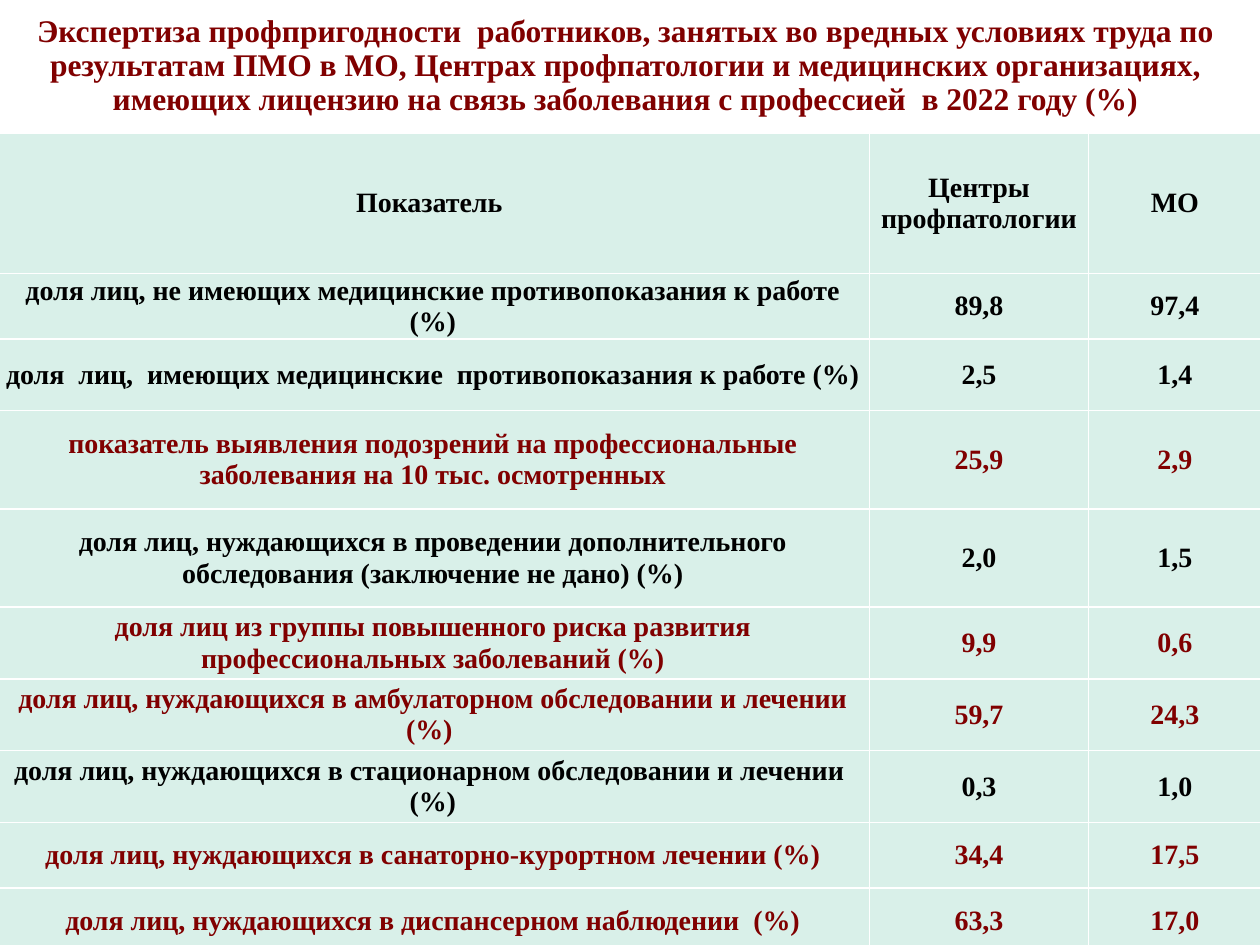
import lxml.etree
import pptx
import pptx.dml.color
import pptx.enum.text
import pptx.oxml.ns
import pptx.util
from pptx.util import Inches

MAROON = pptx.dml.color.RGBColor(0x80, 0x00, 0x00)
BLACK = pptx.dml.color.RGBColor(0x00, 0x00, 0x00)
MINT = pptx.dml.color.RGBColor(0xD9, 0xF0, 0xE9)
WHITE = pptx.dml.color.RGBColor(0xFF, 0xFF, 0xFF)

TITLE = (
    "Экспертиза профпригодности  работников, занятых во вредных условиях труда "
    "по результатам ПМО в МО, Центрах профпатологии и медицинских организациях, "
    "имеющих лицензию на связь заболевания с профессией  в 2022 году (%)"
)
COLUMN_WIDTHS = (6.93, 1.74, 1.37)
# Row height, text colour, indicator, occupational centres, medical organisations
INDICATORS = (
    (1.11, BLACK, "Показатель\u00a0", "Центры профпатологии", "МО"),
    (0.52, BLACK, "доля лиц, не имеющих медицинские противопоказания к работе (%)",
     "89,8", "97,4"),
    (0.57, BLACK, "доля  лиц,  имеющих медицинские  противопоказания к работе (%)",
     "2,5", "1,4"),
    (0.78, MAROON, "показатель выявления подозрений на профессиональные "
     "заболевания на 10 тыс. осмотренных", "25,9", "2,9"),
    (0.78, BLACK, "доля лиц, нуждающихся в проведении дополнительного "
     "обследования (заключение не дано) (%)", "2,0", "1,5"),
    (0.57, MAROON, "доля лиц из группы повышенного риска развития "
     "профессиональных заболеваний (%)", "9,9", "0,6"),
    (0.57, MAROON, "доля лиц, нуждающихся в амбулаторном обследовании и лечении (%) ",
     "59,7", "24,3"),
    (0.57, BLACK, "доля лиц, нуждающихся в стационарном обследовании и лечении  (%)",
     "0,3", "1,0"),
    (0.52, MAROON, "доля лиц, нуждающихся в санаторно-курортном лечении (%)",
     "34,4", "17,5"),
    (0.52, MAROON, "доля лиц, нуждающихся в диспансерном наблюдении  (%)",
     "63,3", "17,0"),
)


def format_paragraph(paragraph, size, color):
    paragraph.alignment = pptx.enum.text.PP_ALIGN.CENTER
    font = paragraph.font
    font.name = "Times New Roman"
    font.size = pptx.util.Pt(size)
    font.bold = True
    font.color.rgb = color


def set_title(slide):
    title = slide.shapes.title
    title.left, title.top = Inches(-0.03), Inches(0.12)
    title.width, title.height = Inches(9.99), Inches(0.99)
    frame = title.text_frame
    frame.text = TITLE
    frame.word_wrap = True
    frame.auto_size = pptx.enum.text.MSO_AUTO_SIZE.NONE
    frame.vertical_anchor = pptx.enum.text.MSO_ANCHOR.TOP
    frame.margin_top = frame.margin_bottom = 0
    paragraph = frame.paragraphs[0]
    paragraph.line_spacing = 0.9
    format_paragraph(paragraph, 18, MAROON)


def add_borders(cell):
    """Draw white one-point lines; call before the fill, which must follow them."""
    properties = cell._tc.get_or_add_tcPr()
    qn = pptx.oxml.ns.qn
    for side in ("a:lnL", "a:lnR", "a:lnT", "a:lnB"):
        line = lxml.etree.SubElement(properties, qn(side), w=str(pptx.util.Pt(1)))
        solid = lxml.etree.SubElement(line, qn("a:solidFill"))
        lxml.etree.SubElement(solid, qn("a:srgbClr"), val=str(WHITE))


def fill_cell(cell, text, color):
    cell.text = text
    cell.vertical_anchor = pptx.enum.text.MSO_ANCHOR.MIDDLE
    cell.margin_left = cell.margin_right = Inches(0.06)
    cell.margin_top = cell.margin_bottom = 0
    add_borders(cell)
    cell.fill.solid()
    cell.fill.fore_color.rgb = MINT
    format_paragraph(cell.text_frame.paragraphs[0], 16, color)


def add_indicator_table(slide):
    table = slide.shapes.add_table(
        len(INDICATORS), len(COLUMN_WIDTHS),
        Inches(-0.03), Inches(1.06), Inches(10.03), Inches(6.54),
    ).table
    for column, width in zip(table.columns, COLUMN_WIDTHS):
        column.width = Inches(width)
    for row, (height, color, *texts) in zip(table.rows, INDICATORS):
        row.height = Inches(height)
        for cell, text in zip(row.cells, texts):
            fill_cell(cell, text, color)


def main():
    presentation = pptx.Presentation()
    presentation.slide_width = Inches(10)
    presentation.slide_height = Inches(7.5)
    slide = presentation.slides.add_slide(presentation.slide_layouts[5])
    set_title(slide)
    add_indicator_table(slide)
    presentation.save("out.pptx")


if __name__ == "__main__":
    main()
